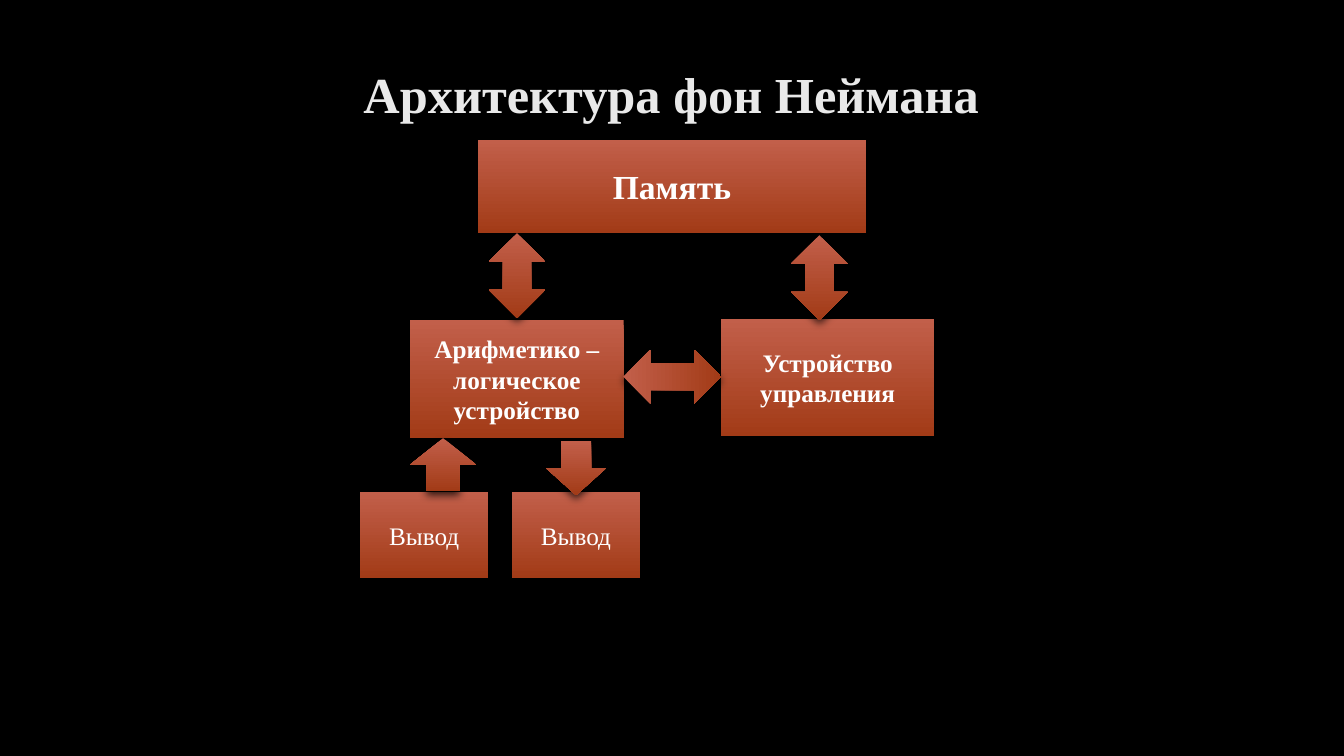
"""Builds a slide with the von Neumann architecture as a block diagram."""
from lxml.etree import SubElement
from pptx import Presentation
from pptx.dml.color import RGBColor
from pptx.enum.shapes import MSO_SHAPE
from pptx.enum.text import MSO_ANCHOR, PP_ALIGN
from pptx.oxml.ns import qn
from pptx.util import Pt

COLORS = {"back": "000000", "title": "E9E9E9", "edge": "404040",
          "text": "FFFFFF", "top": "C25F4A", "base": "A23B17", "shade": "000000"}
FONT = "Times New Roman"


def color(name):
    return RGBColor.from_string(COLORS[name])


def add_tint(parent, name, alpha):
    tint = SubElement(parent, qn("a:srgbClr"), val=COLORS[name])
    SubElement(tint, qn("a:alpha"), val=str(alpha * 1000))


def add_shade(shape):
    shape.shadow.inherit = False
    effects = shape._element.spPr.find(qn("a:effectLst"))
    shade = SubElement(effects, qn("a:outerShdw"), blurRad=str(Pt(6)),
                       dist=str(Pt(3)), dir="5400000", rotWithShape="0")
    add_tint(shade, "shade", 75)


def add_edge(font):
    font.line.width = Pt(0.75)
    line = font._element.find(qn("a:ln"))
    add_tint(SubElement(line, qn("a:solidFill")), "edge", 10)


def write(shape, text, size=18, bold=True, name="text", anchor=MSO_ANCHOR.MIDDLE):
    frame = shape.text_frame
    frame.word_wrap = True
    frame.vertical_anchor = anchor
    line = frame.paragraphs[0]
    line.alignment = PP_ALIGN.CENTER
    run = line.add_run()
    run.text = text
    font = run.font
    font.name, font.size, font.bold = FONT, Pt(size), bold
    font.color.rgb = color(name)
    return run


def add_block(slide, kind, left, top, width, height, turn=0):
    shape = slide.shapes.add_shape(kind, Pt(left), Pt(top), Pt(width), Pt(height))
    shape.rotation = turn
    fill = shape.fill
    fill.gradient()
    fill.gradient_angle = 270
    for stop, name in zip(fill.gradient_stops, ("top", "base")):
        stop.color.rgb = color(name)
    shape.line.fill.background()
    add_shade(shape)
    return shape


def add_title(slide, text):
    box = slide.shapes.add_textbox(Pt(72), Pt(45), Pt(815), Pt(76))
    box.text_frame.margin_top = 0
    run = write(box, text, size=36, name="title", anchor=MSO_ANCHOR.TOP)
    props = run._r.get_or_add_rPr()
    line = SubElement(props, qn("a:ln"), w=str(Pt(0.75)))
    add_tint(SubElement(line, qn("a:solidFill")), "edge", 10)
    props.insert(0, line)


def main():
    deck = Presentation()
    deck.slide_width, deck.slide_height = Pt(960), Pt(540)
    slide = deck.slides.add_slide(deck.slide_layouts[6])
    back = slide.background.fill
    back.solid()
    back.fore_color.rgb = color("back")
    add_title(slide, "Архитектура фон Неймана")

    boxes = [
        ("Память", (341.5, 100, 277, 66.5), 24, True),
        ("Арифметико –логическое устройство", (293, 228.7, 152.5, 84), 18, True),
        ("Устройство управления", (515, 227.8, 152.5, 84), 18, True),
        ("Вывод", (365.7, 351.5, 91.5, 61.3), 18, False),
        ("Вывод", (257.3, 351.5, 91.5, 61.3), 18, False),
    ]
    for text, place, size, bold in boxes:
        box = add_block(slide, MSO_SHAPE.RECTANGLE, *place)
        write(box, text, size=size, bold=bold)

    arrows = [
        (MSO_SHAPE.UP_DOWN_ARROW, 349, 166.5, 40.5, 60.7, 0),
        (MSO_SHAPE.UP_DOWN_ARROW, 565, 168, 40.5, 60.7, 0),
        (MSO_SHAPE.UP_DOWN_ARROW, 461, 234, 38.5, 70, 270),
        (MSO_SHAPE.DOWN_ARROW, 390, 315, 43, 38.7, 0),
        (MSO_SHAPE.UP_ARROW, 293, 313, 47, 37.7, 0),
    ]
    for arrow in arrows:
        add_block(slide, *arrow)
    deck.save("out.pptx")


if __name__ == "__main__":
    main()
